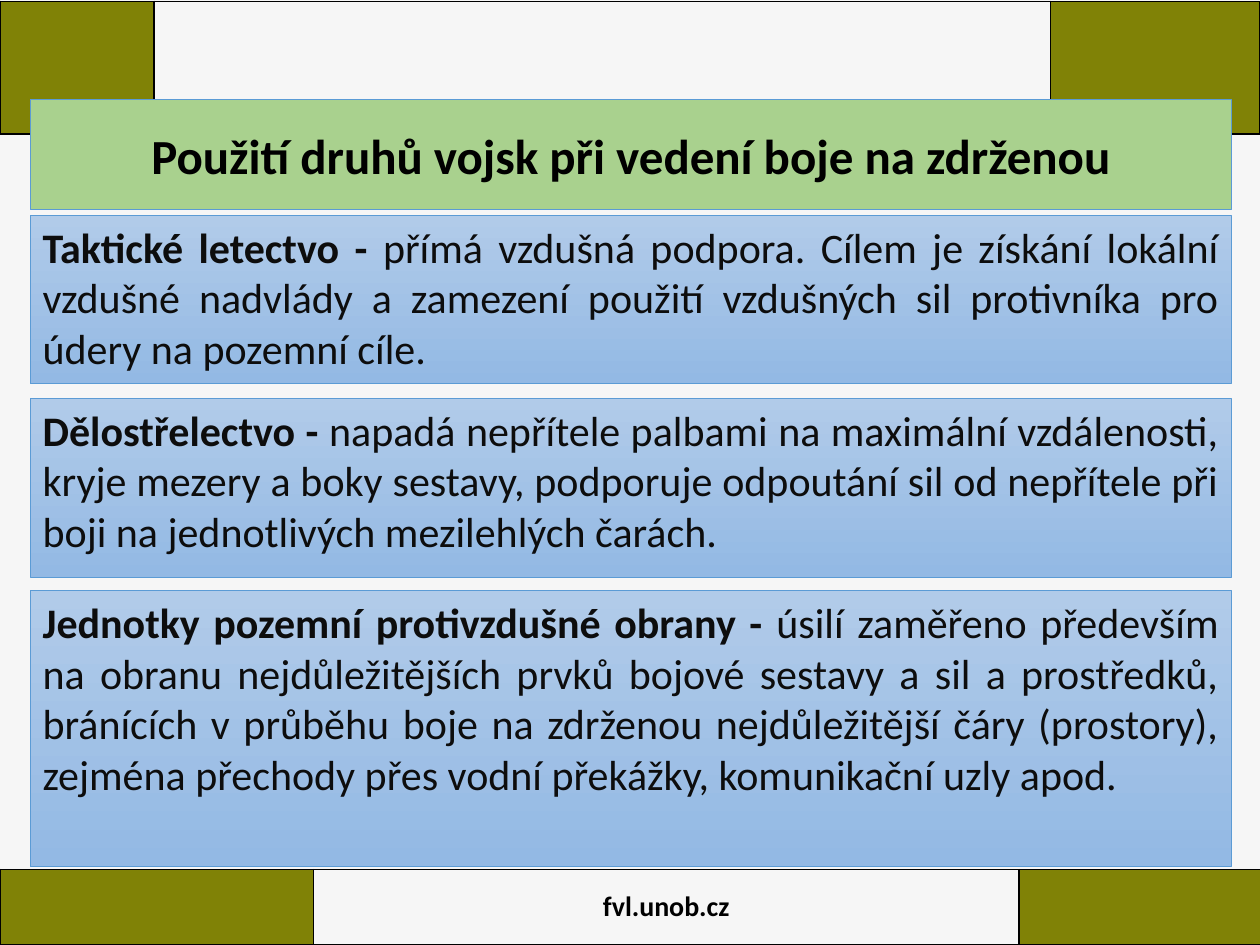
from lxml import etree
from pptx import Presentation
from pptx.dml.color import RGBColor
from pptx.enum.shapes import MSO_SHAPE
from pptx.enum.text import MSO_ANCHOR, PP_ALIGN
from pptx.oxml import parse_xml
from pptx.oxml.ns import nsdecls
from pptx.util import Cm, Pt

RECTANGLE = MSO_SHAPE.RECTANGLE
MIDDLE, TOP = MSO_ANCHOR.MIDDLE, MSO_ANCHOR.TOP
CENTER, JUSTIFY = PP_ALIGN.CENTER, PP_ALIGN.JUSTIFY

FONT = "Calibri"
COLORS = {
    "background": "F6F6F6",
    "olive": "808206",
    "green": "A9D18E",
    "outline": "5B9BD5",
    "panel_top": "B1CBE9",
    "panel_bottom": "93B9E4",
    "black": "000000",
    "body": "0D0D0D",
}
RGB = {name: RGBColor.from_string(value) for name, value in COLORS.items()}


def add_band(slide, top, height, widths):
    table = slide.shapes.add_table(1, 3, Cm(0), Cm(top), Cm(sum(widths)), Cm(height)).table
    table.first_row = False
    table.horz_banding = False
    for index, width in enumerate(widths):
        table.columns[index].width = Cm(width)
        cell = table.cell(0, index)
        cell.vertical_anchor = MIDDLE
        if index == 1:
            cell.fill.background()
        else:
            cell.fill.solid()
            cell.fill.fore_color.rgb = RGB["olive"]
        properties = cell._tc.get_or_add_tcPr()
        for position, side in enumerate(("lnL", "lnR", "lnT", "lnB")):
            border = parse_xml(f'<a:{side} {nsdecls("a")} w="12700"/>')
            fill = etree.SubElement(border, border.tag.replace(side, "solidFill"))
            color = etree.SubElement(fill, border.tag.replace(side, "srgbClr"))
            color.set("val", COLORS["black"])
            properties.insert(position, border)
    return table


def add_box(slide, top, height, anchor, alignment, size, color):
    shape = slide.shapes.add_shape(RECTANGLE, Cm(0.61), Cm(top), Cm(24.21), Cm(height))
    shape.shadow.inherit = False
    shape.line.color.rgb = RGB["outline"]
    shape.line.width = Pt(0.5)
    shape.text_frame.word_wrap = True
    shape.text_frame.vertical_anchor = anchor
    paragraph = shape.text_frame.paragraphs[0]
    paragraph.alignment = alignment
    paragraph.font.name = FONT
    paragraph.font.size = Pt(size)
    paragraph.font.color.rgb = RGB[color]
    return shape, paragraph


presentation = Presentation()
presentation.slide_width = Cm(25.4)
presentation.slide_height = Cm(19.05)
slide = presentation.slides.add_slide(presentation.slide_layouts[6])
slide.background.fill.solid()
slide.background.fill.fore_color.rgb = RGB["background"]

footer = add_band(slide, 17.53, 1.52, (6.32, 14.22, 4.88))
paragraph = footer.cell(0, 1).text_frame.paragraphs[0]
paragraph.text = "fvl.unob.cz"
paragraph.alignment = CENTER
paragraph.font.name = FONT
paragraph.font.size = Pt(16)
paragraph.font.bold = True
paragraph.font.color.rgb = RGB["black"]

add_band(slide, 0.03, 2.67, (3.1, 18.08, 4.22))

panels = (
    (4.34, 3.4, "Taktické letectvo - ",
     "přímá vzdušná podpora. Cílem je získání lokální vzdušné nadvlády a zamezení "
     "použití vzdušných sil protivníka pro údery na pozemní cíle."),
    (8.03, 3.61, "Dělostřelectvo - ",
     "napadá nepřítele palbami na maximální vzdálenosti, kryje mezery a boky sestavy, "
     "podporuje odpoutání sil od nepřítele při boji na jednotlivých mezilehlých čarách."),
    (11.91, 5.56, "Jednotky pozemní protivzdušné obrany - ",
     "úsilí zaměřeno především na obranu nejdůležitějších prvků bojové sestavy a sil "
     "a prostředků, bránících v průběhu boje na zdrženou nejdůležitější čáry "
     "(prostory), zejména přechody přes vodní překážky, komunikační uzly apod."),
)
for top, height, heading, text in panels:
    shape, paragraph = add_box(slide, top, height, TOP, JUSTIFY, 24, "body")
    shape.fill.gradient()
    shape.fill.gradient_angle = 270
    for stop, name, position in zip(shape.fill.gradient_stops, ("panel_top", "panel_bottom"), (0, 1)):
        stop.color.rgb = RGB[name]
        stop.position = position
    for content, bold in ((heading, True), (text, False)):
        run = paragraph.add_run()
        run.text = content
        run.font.bold = bold

title, paragraph = add_box(slide, 2.01, 2.21, MIDDLE, CENTER, 28, "black")
title.fill.solid()
title.fill.fore_color.rgb = RGB["green"]
paragraph.text = "Použití druhů vojsk při vedení boje na zdrženou"
paragraph.font.bold = True

presentation.save("out.pptx")
